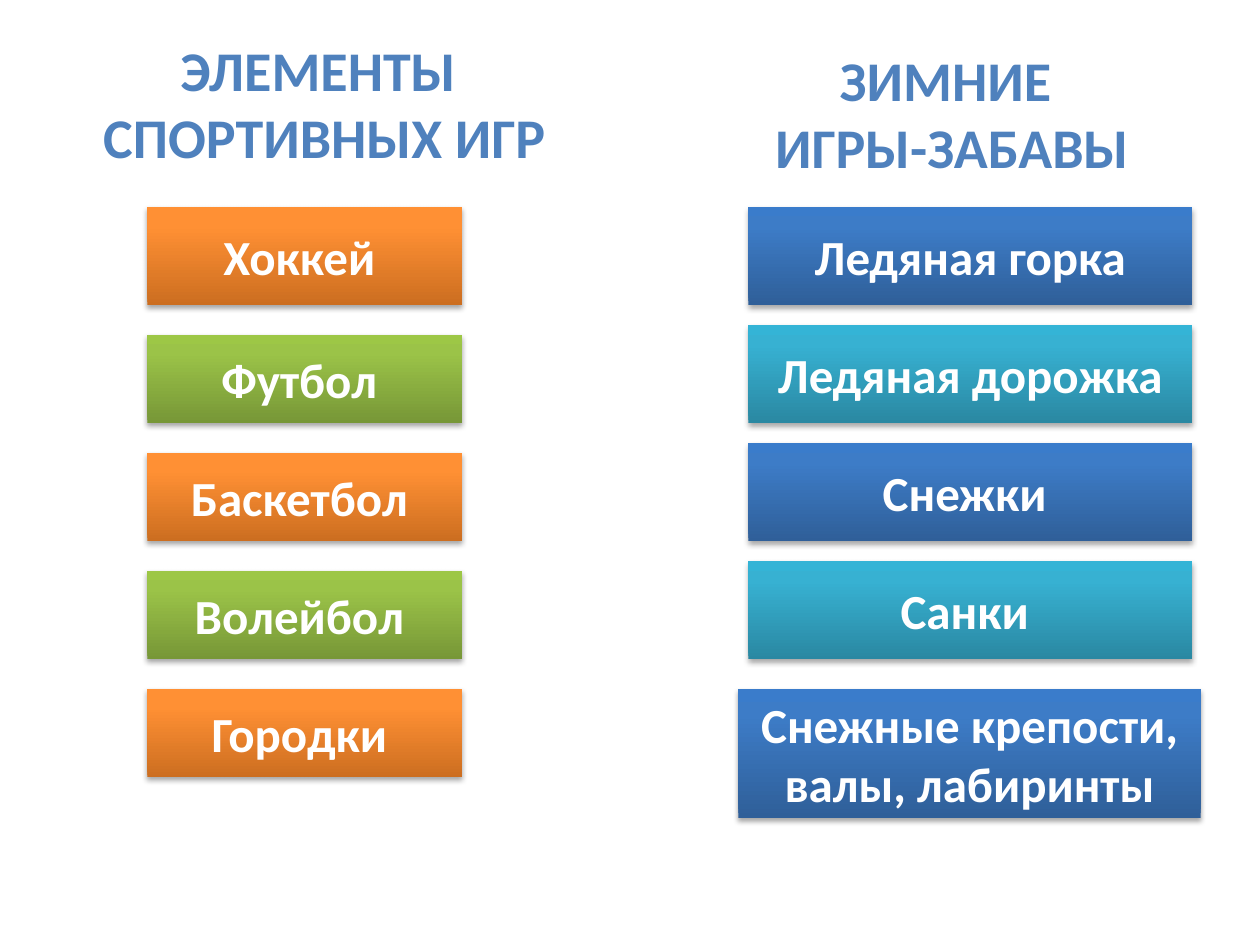
from dataclasses import dataclass

from lxml.etree import SubElement
from pptx import Presentation
from pptx.dml.color import RGBColor
from pptx.enum.shapes import MSO_SHAPE as Preset
from pptx.enum.text import MSO_ANCHOR as Anchor, MSO_AUTO_SIZE as AutoSize, PP_ALIGN as Align
from pptx.oxml import parse_xml
from pptx.oxml.ns import nsdecls, qn
from pptx.slide import Slide
from pptx.text.text import TextFrame
from pptx.util import Inches, Pt

Gradient = tuple[str, str, str]


@dataclass(frozen=True)
class Theme:
    font: str = "Calibri"
    heading_size: int = 32
    label_size: int = 28
    heading: str = "4F81BD"
    label: str = "FFFFFF"
    shadow: str = "000000"
    orange: Gradient = ("CC6E20", "FF9034", "FF9136")
    green: Gradient = ("779737", "9BC348", "9DC746")
    blue: Gradient = ("2F5F99", "3D7CC7", "3A7CCB")
    teal: Gradient = ("2A88A2", "37B1D2", "34B4D6")


@dataclass(frozen=True)
class Box:
    left: float
    top: float
    width: float
    height: float

    def lengths(self) -> list[Inches]:
        return [Inches(v) for v in (self.left, self.top, self.width, self.height)]


@dataclass(frozen=True)
class Card:
    label: str
    box: Box
    gradient: Gradient


@dataclass(frozen=True)
class Heading:
    text: str
    box: Box


THEME = Theme()
ROW_TOP, ROW_PITCH, ROW_HEIGHT, SHORT_HEIGHT = 1.64, 0.9375, 0.78, 0.7

HEADINGS = [
    Heading("ЭЛЕМЕНТЫ \nСПОРТИВНЫХ ИГР", Box(0.7, 0.23, 3.75, 1.18)),
    Heading("ЗИМНИЕ \nИГРЫ-ЗАБАВЫ", Box(6.04, 0.31, 3.03, 1.18)),
]
SPORTS = ["Хоккей ", "Футбол ", "Баскетбол ", "Волейбол ", "Городки "]
WINTER_GAMES = ["Ледяная горка", "Ледяная дорожка", "Снежки ", "Санки "]
FORTS = Card("Снежные крепости, валы, лабиринты", Box(5.86, 5.47, 3.67, 1.02), THEME.blue)


def column(labels: list[str], left: float, width: float, heights: list[float],
           colours: tuple[Gradient, Gradient]) -> list[Card]:
    """Stack cards whose bottom edges are evenly spaced, with alternating colours."""
    cards = []
    for row, (label, height) in enumerate(zip(labels, heights)):
        bottom = ROW_TOP + ROW_HEIGHT + row * ROW_PITCH
        cards.append(Card(label, Box(left, bottom - height, width, height), colours[row % 2]))
    return cards


def style_text(frame: TextFrame, size: int, colour: str) -> None:
    for paragraph in frame.paragraphs:
        paragraph.alignment = Align.CENTER
        for run in paragraph.runs:
            run.font.name = THEME.font
            run.font.size = Pt(size)
            run.font.bold = True
            run.font.color.rgb = RGBColor.from_string(colour)


def gradient_fill(gradient: Gradient):
    """Three-stop fill that runs from the bottom edge to the top."""
    stops = "".join(
        f'<a:gs pos="{position * 1000}"><a:srgbClr val="{colour}"/></a:gs>'
        for position, colour in zip((0, 80, 100), gradient))
    return parse_xml(
        f'<a:gradFill {nsdecls("a")} rotWithShape="1"><a:gsLst>{stops}</a:gsLst>'
        '<a:lin ang="16200000" scaled="0"/></a:gradFill>')


def add_drop_shadow(shape) -> None:
    shape.shadow.inherit = False
    effects = shape._element.spPr.find(qn("a:effectLst"))
    shadow = SubElement(effects, qn("a:outerShdw"), blurRad=str(Pt(3.1)),
                        dist=str(Pt(1.8)), dir="5400000", rotWithShape="0")
    colour = SubElement(shadow, qn("a:srgbClr"), val=THEME.shadow)
    SubElement(colour, qn("a:alpha"), val="35000")


def add_card(slide: Slide, card: Card) -> None:
    shape = slide.shapes.add_shape(Preset.RECTANGLE, *card.box.lengths())
    shape.line.fill.background()
    shape._element.spPr.find(qn("a:prstGeom")).addnext(gradient_fill(card.gradient))
    add_drop_shadow(shape)
    frame = shape.text_frame
    frame.text = card.label
    frame.word_wrap = True
    frame.vertical_anchor = Anchor.MIDDLE
    style_text(frame, THEME.label_size, THEME.label)


def add_heading(slide: Slide, heading: Heading) -> None:
    frame = slide.shapes.add_textbox(*heading.box.lengths()).text_frame
    frame.text = heading.text
    frame.word_wrap = False
    frame.auto_size = AutoSize.SHAPE_TO_FIT_TEXT
    style_text(frame, THEME.heading_size, THEME.heading)


def main() -> None:
    deck = Presentation()
    deck.slide_width, deck.slide_height = Inches(10), Inches(7.5)
    slide = deck.slides.add_slide(deck.slide_layouts[6])

    sports = column(SPORTS, 1.17, 2.5, [ROW_HEIGHT] + [SHORT_HEIGHT] * 4,
                    (THEME.orange, THEME.green))
    winter_games = column(WINTER_GAMES, 5.94, 3.52, [ROW_HEIGHT] * 4,
                          (THEME.blue, THEME.teal))
    for heading in HEADINGS:
        add_heading(slide, heading)
    for card in [*sports, *winter_games, FORTS]:
        add_card(slide, card)
    deck.save("out.pptx")


if __name__ == "__main__":
    main()
